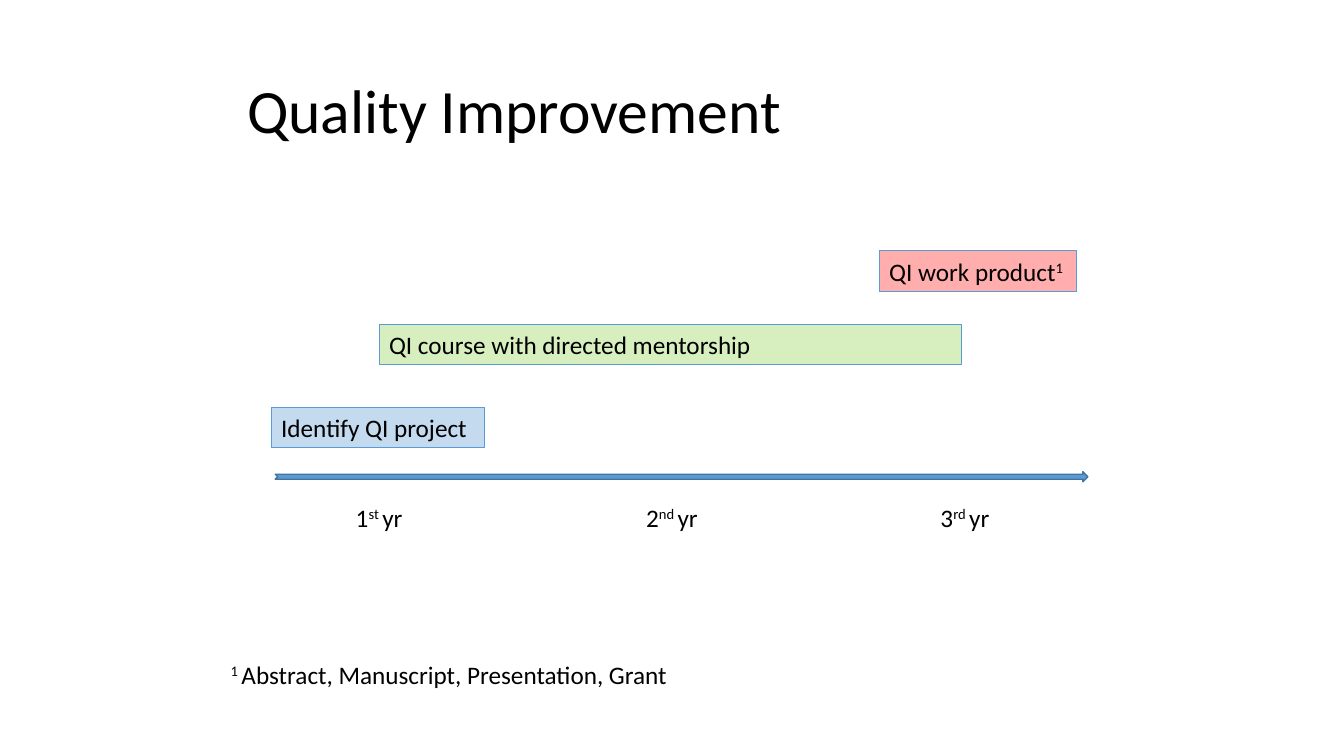
"""Build the Quality Improvement timeline slide."""
from lxml import etree
from pptx import Presentation
from pptx.dml.color import RGBColor
from pptx.enum.shapes import MSO_SHAPE
from pptx.enum.text import MSO_ANCHOR, MSO_AUTO_SIZE, PP_ALIGN
from pptx.oxml.ns import qn
from pptx.util import Pt

PX = 9144
FONT = "Calibri"
BLACK = RGBColor(0x00, 0x00, 0x00)
BLUE = RGBColor(0x5B, 0x9B, 0xD5)
NAVY = RGBColor(0x43, 0x73, 0x9E)
GREEN = RGBColor(0x92, 0xD0, 0x50)
RED = RGBColor(0xFF, 0x00, 0x00)
ARROW = MSO_SHAPE.NOTCHED_RIGHT_ARROW
MIDDLE = MSO_ANCHOR.MIDDLE
GROW = MSO_AUTO_SIZE.SHAPE_TO_FIT_TEXT
FIXED = MSO_AUTO_SIZE.NONE
LEFT = PP_ALIGN.LEFT

BARS = [
    (269, 404, 212, BLUE, 36, False, [("Identify QI project", False)]),
    (376, 322, 578, GREEN, 36, True,
     [("QI course with directed mentorship", False)]),
    (872, 249, 196, RED, 32, False,
     [("QI work product", False), ("1", True)]),
]
YEARS = [(343, 71, "1", "st "), (631, 76, "2", "nd "), (923, 73, "3", "rd ")]


def style(font, size):
    font.name = FONT
    font.size = Pt(size)
    font.color.rgb = BLACK


def add_title(slide, text):
    title = slide.shapes.title
    title.left, title.top = 235 * PX, 40 * PX
    title.width, title.height = 862 * PX, 145 * PX
    frame = title.text_frame
    frame.text = text
    frame.auto_size = FIXED
    frame.vertical_anchor = MIDDLE
    para = frame.paragraphs[0]
    para.alignment = LEFT
    para.line_spacing = 0.9
    style(para.runs[0].font, 44)


def add_label(slide, left, top, width, parts, wrap=False):
    box = slide.shapes.add_textbox(left * PX, top * PX, width * PX, 40 * PX)
    frame = box.text_frame
    frame.word_wrap = wrap
    frame.auto_size = GROW
    for text, raised in parts:
        run = frame.paragraphs[0].add_run()
        run.text = text
        style(run.font, 18)
        if raised:
            run._r.get_or_add_rPr().set("baseline", "30000")
    return box


def add_bar(slide, left, top, width, color, alpha, wrap, parts):
    bar = add_label(slide, left, top, width, parts, wrap)
    bar.fill.solid()
    bar.fill.fore_color.rgb = color
    tint = bar._element.spPr.find(qn("a:solidFill"))[0]
    etree.SubElement(tint, qn("a:alpha")).set("val", str(alpha * 1000))
    bar.line.color.rgb = BLUE
    bar.line.width = Pt(0.75)


def add_arrow(slide):
    arrow = slide.shapes.add_shape(ARROW, 273 * PX, 468 * PX, 806 * PX, 10 * PX)
    arrow.shadow.inherit = False
    arrow.fill.solid()
    arrow.fill.fore_color.rgb = BLUE
    arrow.line.color.rgb = NAVY
    arrow.line.width = Pt(1)


def main():
    deck = Presentation()
    deck.slide_width, deck.slide_height = 1333 * PX, 750 * PX
    slide = deck.slides.add_slide(deck.slide_layouts[5])
    add_title(slide, "Quality Improvement")
    add_arrow(slide)
    for bar in BARS:
        add_bar(slide, *bar)
    for left, width, digit, suffix in YEARS:
        parts = [(digit, False), (suffix, True), ("yr", False)]
        add_label(slide, left, 493, width, parts)
    note = "Abstract, Manuscript, Presentation, Grant"
    add_label(slide, 219, 649, 459, [("1 ", True), (note, False)])
    deck.save("out.pptx")


if __name__ == "__main__":
    main()
